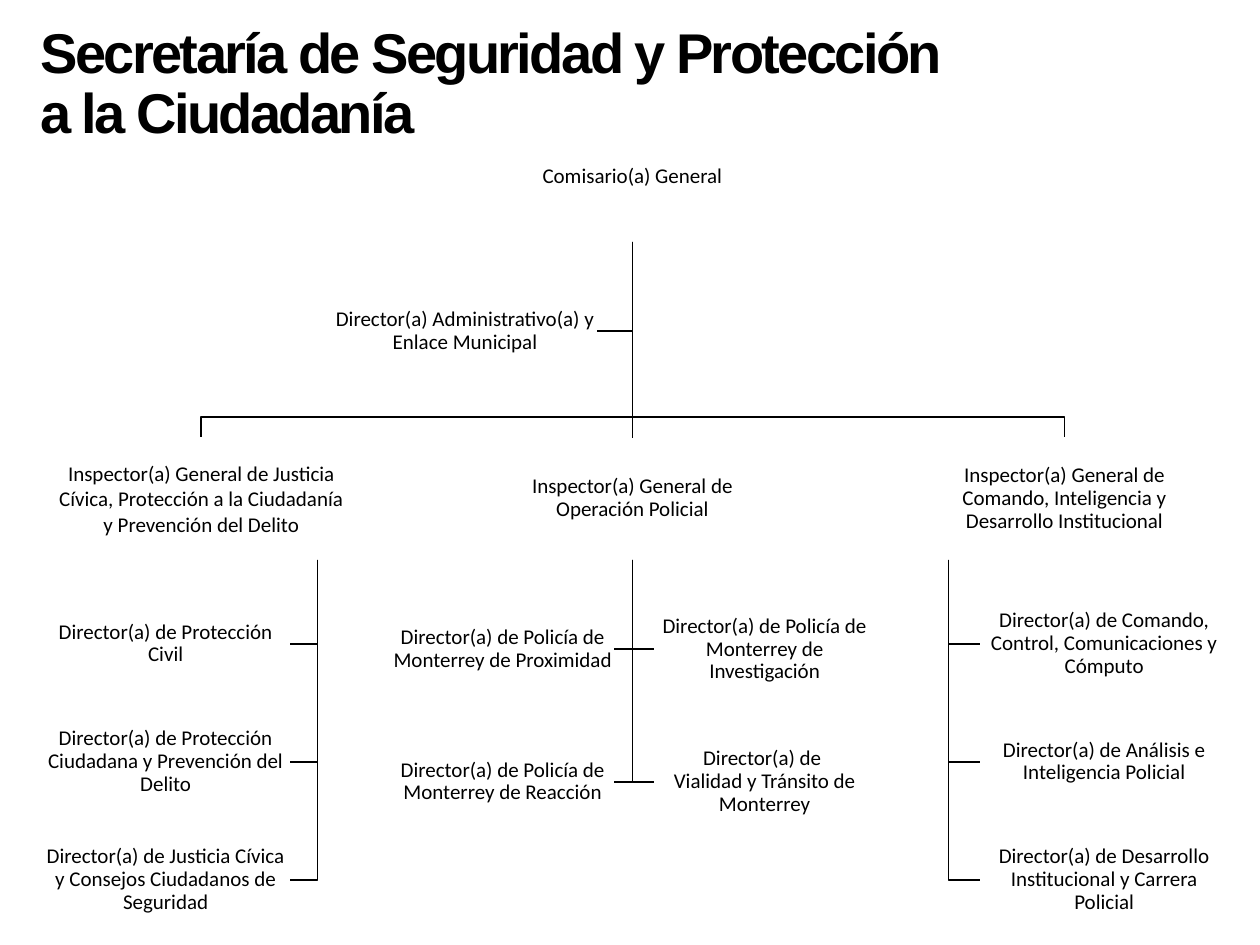
"""Builds the organisation chart of the public safety department."""
import pptx
import pptx.util
import pptx.dml.color
import pptx.enum.shapes
import pptx.enum.text
import pptx.oxml
import pptx.oxml.ns

Cm, Pt = pptx.util.Cm, pptx.util.Pt

COLOURS = {"ink": "000000", "box": "FFFFFF"}
HEADING = ["Secretaría de Seguridad y Protección ", "a la Ciudadanía"]
COMMISSIONER = ["Comisario(a) General"]
ADMINISTRATOR = ["Director(a) Administrativo(a) y Enlace Municipal"]
JUSTICE = ["Inspector(a) General de Justicia Cívica, Protección a la Ciudadanía y Prevención del Delito"]
OPERATIONS = ["Inspector(a) General de Operación Policial"]
COMMAND = ["Inspector(a) General de Comando, Inteligencia y Desarrollo Institucional"]
JUSTICE_DIRECTORS = [
    ["Director(a) de Protección Civil"],
    ["Director(a) de Protección Ciudadana y Prevención del Delito"],
    ["Director(a) de Justicia Cívica y Consejos Ciudadanos de Seguridad"],
]
PATROL_DIRECTORS = [
    ["Director(a) de Policía de Monterrey de Proximidad"],
    ["Director(a) de Policía de Monterrey de Reacción"],
]
INQUIRY_DIRECTORS = [
    ["Director(a) de Policía de Monterrey de Investigación"],
    ["Director(a) de ", "Vialidad y Tránsito de Monterrey"],
]
COMMAND_DIRECTORS = [
    ["Director(a) de Comando, Control, Comunicaciones y Cómputo"],
    ["Director(a) de Análisis e Inteligencia Policial"],
    ["Director(a) de Desarrollo Institucional y Carrera Policial"],
]

INSPECTOR_TOP, INSPECTOR_SIZE = 8.82, (5.84, 2.46)
OUTER_SIZE, OUTER_PITCH = (5.0, 2.03), 2.38
INNER_SIZE, INNER_PITCH = (4.47, 2.26), 2.67
DIRECTOR_TOP, BUS_Y, CENTRE = 11.96, 8.41, 12.75
TRUNK_INSET = 0.58

presentation = pptx.Presentation()
presentation.slide_width, presentation.slide_height = Cm(25.4), Cm(19.05)
slide = presentation.slides.add_slide(presentation.slide_layouts[5])


def colour(name):
    return pptx.dml.color.RGBColor.from_string(COLOURS[name])


def write(frame, lines, font_name, size, align, spacing, bold=False, tracking=None):
    frame.word_wrap = True
    frame.auto_size = pptx.enum.text.MSO_AUTO_SIZE.NONE
    frame.vertical_anchor = pptx.enum.text.MSO_ANCHOR.MIDDLE
    paragraph = frame.paragraphs[0]
    paragraph.alignment = align
    paragraph.line_spacing = spacing
    for index, line in enumerate(lines):
        if index:
            paragraph.add_line_break()
        run = paragraph.add_run()
        run.text = line
        run.font.name, run.font.size, run.font.bold = font_name, Pt(size), bold
        run.font.color.rgb = colour("ink")
        if tracking:
            run.font._element.set("spc", str(tracking))


def add_post(lines, left, top, size, spacing=0.9, filled=True):
    post = slide.shapes.add_shape(
        pptx.enum.shapes.MSO_SHAPE.RECTANGLE, Cm(left), Cm(top), Cm(size[0]), Cm(size[1]))
    post.shadow.inherit = False
    post.line.fill.background()
    if filled:
        post.fill.solid()
        post.fill.fore_color.rgb = colour("box")
    else:
        post.fill.background()
    frame = post.text_frame
    frame.margin_left = frame.margin_right = frame.margin_top = frame.margin_bottom = Cm(0.03)
    write(frame, lines, "Calibri", 12, pptx.enum.text.PP_ALIGN.CENTER, spacing)
    return post


def style_line(line):
    line.color.rgb = colour("ink")
    line.width = Pt(1)


def add_branch(*points):
    start, *rest = [(Cm(x), Cm(y)) for x, y in points]
    builder = slide.shapes.build_freeform(*start, scale=1.0)
    builder.add_line_segments(rest, close=False)
    branch = builder.convert_to_shape()
    branch.shadow.inherit = False
    branch.fill.background()
    style_line(branch.line)


def add_directors(directors, left, size, pitch, trunk):
    edge = left if left > trunk else left + size[0]
    for row, lines in enumerate(directors):
        top = DIRECTOR_TOP + row * pitch
        middle = top + size[1] / 2
        add_post(lines, left, top, size)
        add_branch((trunk, INSPECTOR_TOP + INSPECTOR_SIZE[1]), (trunk, middle), (edge, middle))


heading = slide.shapes.title
heading.left, heading.top, heading.width, heading.height = Cm(0.56), Cm(0.33), Cm(22.86), Cm(2.79)
write(heading.text_frame, HEADING, "Arial", 32, pptx.enum.text.PP_ALIGN.LEFT, 0.9, True, -150)

commissioner_size, commissioner_top = (5.36, 2.69), 2.18
commissioner_bottom = commissioner_top + commissioner_size[1]
commissioner = add_post(COMMISSIONER, CENTRE - commissioner_size[0] / 2, commissioner_top,
                        commissioner_size, 1.0, False)

administrator_left, administrator_top, administrator_size = 6.71, 5.61, (5.33, 2.13)
administrator_middle = administrator_top + administrator_size[1] / 2
add_post(ADMINISTRATOR, administrator_left, administrator_top, administrator_size)
add_branch((CENTRE, commissioner_bottom), (CENTRE, administrator_middle),
           (administrator_left + administrator_size[0], administrator_middle))

justice_left, command_left = 1.14, 18.54
for lines, left, spacing in [(JUSTICE, justice_left, 1.0), (COMMAND, command_left, 0.9)]:
    add_post(lines, left, INSPECTOR_TOP, INSPECTOR_SIZE, spacing)
    middle = left + INSPECTOR_SIZE[0] / 2
    add_branch((CENTRE, commissioner_bottom), (CENTRE, BUS_Y), (middle, BUS_Y), (middle, INSPECTOR_TOP))

operations = add_post(OPERATIONS, CENTRE - INSPECTOR_SIZE[0] / 2, INSPECTOR_TOP, INSPECTOR_SIZE)
command_line = slide.shapes.add_connector(
    pptx.enum.shapes.MSO_CONNECTOR.STRAIGHT, Cm(CENTRE), Cm(commissioner_bottom), Cm(CENTRE), Cm(INSPECTOR_TOP))
command_line.begin_connect(commissioner, 2)
command_line.end_connect(operations, 0)
style_line(command_line.line)
command_line._element.spPr.append(pptx.oxml.parse_xml(
    "<a:effectLst %s/>" % pptx.oxml.ns.nsdecls("a")))

justice_trunk = justice_left + INSPECTOR_SIZE[0] - TRUNK_INSET
command_trunk = command_left + TRUNK_INSET
for directors, left, size, pitch, trunk in [
    (JUSTICE_DIRECTORS, 0.84, OUTER_SIZE, OUTER_PITCH, justice_trunk),
    (PATROL_DIRECTORS, 7.9, INNER_SIZE, INNER_PITCH, CENTRE),
    (INQUIRY_DIRECTORS, 13.18, INNER_SIZE, INNER_PITCH, CENTRE),
    (COMMAND_DIRECTORS, 19.76, OUTER_SIZE, OUTER_PITCH, command_trunk),
]:
    add_directors(directors, left, size, pitch, trunk)

presentation.save("out.pptx")
